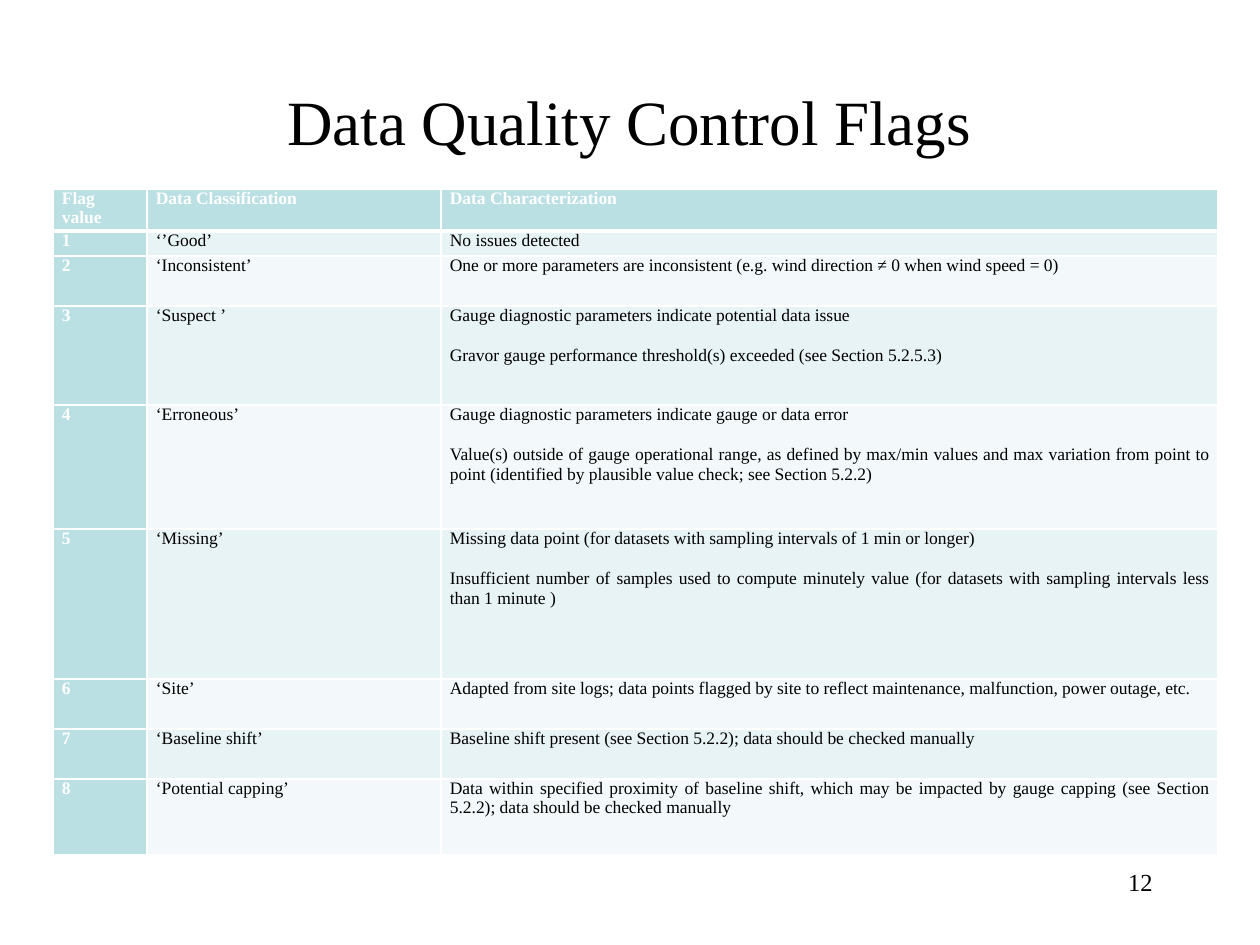
from lxml import etree
from pptx import Presentation
from pptx.dml.color import RGBColor
from pptx.enum.text import MSO_ANCHOR, PP_ALIGN
from pptx.oxml.ns import qn
from pptx.util import Emu, Pt

LEFT, CENTER, RIGHT, JUSTIFY = PP_ALIGN.LEFT, PP_ALIGN.CENTER, PP_ALIGN.RIGHT, PP_ALIGN.JUSTIFY
TOP, MIDDLE = MSO_ANCHOR.TOP, MSO_ANCHOR.MIDDLE

EMU_PER_INCH = 914400
PX_PER_INCH = 126
FONT = "Times New Roman"
BLACK, WHITE = "000000", "FFFFFF"
TEAL = "BBE0E3"
BANDS = ("E7F3F4", "F3F9FA")

COLUMN_WIDTHS = (94, 294, 777)
ROW_HEIGHTS = (42, 25, 50, 99, 124, 150, 50, 50, 76)
HEADINGS = ("Flag value", "Data Classification", "Data Characterization")

# Classification and characterization paragraphs, in order of flag value
FLAGS = (
    ("‘’Good’", ["No issues detected"]),
    ("‘Inconsistent’", [
        "One or more parameters are inconsistent (e.g. wind direction ≠ 0 when wind speed = 0)"]),
    ("‘Suspect ’", [
        "Gauge diagnostic parameters indicate potential data issue",
        "Gravor gauge performance threshold(s) exceeded (see Section 5.2.5.3)"]),
    ("‘Erroneous’", [
        "Gauge diagnostic parameters indicate gauge or data error",
        "Value(s) outside of gauge operational range, as defined by max/min values and max "
        "variation from point to point (identified by plausible value check; see Section 5.2.2)"]),
    ("‘Missing’", [
        "Missing data point (for datasets with sampling intervals of 1 min or longer)",
        "Insufficient number of samples used to compute minutely value (for datasets with "
        "sampling intervals less than 1 minute )"]),
    ("‘Site’", [
        "Adapted from site logs; data points flagged by site to reflect maintenance, "
        "malfunction, power outage, etc."]),
    ("‘Baseline shift’", [
        "Baseline shift present (see Section 5.2.2); data should be checked manually"]),
    ("‘Potential capping’", [
        "Data within specified proximity of baseline shift, which may be impacted by gauge "
        "capping (see Section 5.2.2); data should be checked manually"]),
)


def px(length):
    return Emu(round(length * EMU_PER_INCH / PX_PER_INCH))


def rgb(value):
    return RGBColor.from_string(value)


def write_text(frame, paragraphs, size=10, color=BLACK, bold=False, align=LEFT, gap=0):
    """Fill a text frame; gap is the space before and after each paragraph."""
    frame.word_wrap = True
    for index, text in enumerate(paragraphs):
        para = frame.add_paragraph() if index else frame.paragraphs[0]
        para.alignment = align
        para.space_before = Pt(gap if index else 0)
        para.space_after = Pt(gap)
        span = para.add_run()
        span.text = text
        span.font.name = FONT
        span.font.size = Pt(size)
        span.font.bold = bold
        span.font.color.rgb = rgb(color)


def add_label(page, text, left, top, width, height, anchor=TOP, **text_format):
    box = page.shapes.add_textbox(px(left), px(top), px(width), px(height))
    box.text_frame.vertical_anchor = anchor
    write_text(box.text_frame, [text], **text_format)


def set_borders(cell, top_width=1, bottom_width=1):
    properties = cell._tc.get_or_add_tcPr()
    widths = {"a:lnL": 1, "a:lnR": 1, "a:lnT": top_width, "a:lnB": bottom_width}
    for tag, width in widths.items():
        line = etree.SubElement(properties, qn(tag), w=str(Pt(width)))
        fill = etree.SubElement(line, qn("a:solidFill"))
        etree.SubElement(fill, qn("a:srgbClr"), val=WHITE)


def style_cell(cell, paragraphs, fill, top_width=1, bottom_width=1, **text_format):
    cell.margin_left = cell.margin_right = px(9)
    cell.margin_top = cell.margin_bottom = 0
    set_borders(cell, top_width, bottom_width)
    cell.fill.solid()
    cell.fill.fore_color.rgb = rgb(fill)
    write_text(cell.text_frame, paragraphs, align=JUSTIFY, gap=6, **text_format)


def add_flag_table(page, left, top):
    table = page.shapes.add_table(
        len(ROW_HEIGHTS), len(COLUMN_WIDTHS), px(left), px(top),
        px(sum(COLUMN_WIDTHS)), px(sum(ROW_HEIGHTS))).table
    table.horz_banding = False
    for column, width in zip(table.columns, COLUMN_WIDTHS):
        column.width = px(width)
    for row, height in zip(table.rows, ROW_HEIGHTS):
        row.height = px(height)

    # Header row with a thick rule below
    for column, heading in enumerate(HEADINGS):
        style_cell(table.cell(0, column), [heading], TEAL, bottom_width=3,
                   color=WHITE, bold=True)

    # Flag rows in alternating bands
    for value, (name, details) in enumerate(FLAGS, start=1):
        band = BANDS[(value - 1) % 2]
        rule = 3 if value == 1 else 1
        style_cell(table.cell(value, 0), [str(value)], TEAL, top_width=rule,
                   color=WHITE, bold=True)
        style_cell(table.cell(value, 1), [name], band, top_width=rule)
        style_cell(table.cell(value, 2), details, band, top_width=rule)


def main():
    deck = Presentation()
    deck.slide_width, deck.slide_height = px(1260), px(945)
    page = deck.slides.add_slide(deck.slide_layouts[6])

    # Title, table and page number
    add_label(page, "Data Quality Control Flags", 94, 84, 1071, 73,
              anchor=MIDDLE, size=36, align=CENTER)
    add_flag_table(page, 53, 189)
    add_label(page, "12", 903, 861, 262, 63, size=14, align=RIGHT)

    deck.save("out.pptx")


if __name__ == "__main__":
    main()
